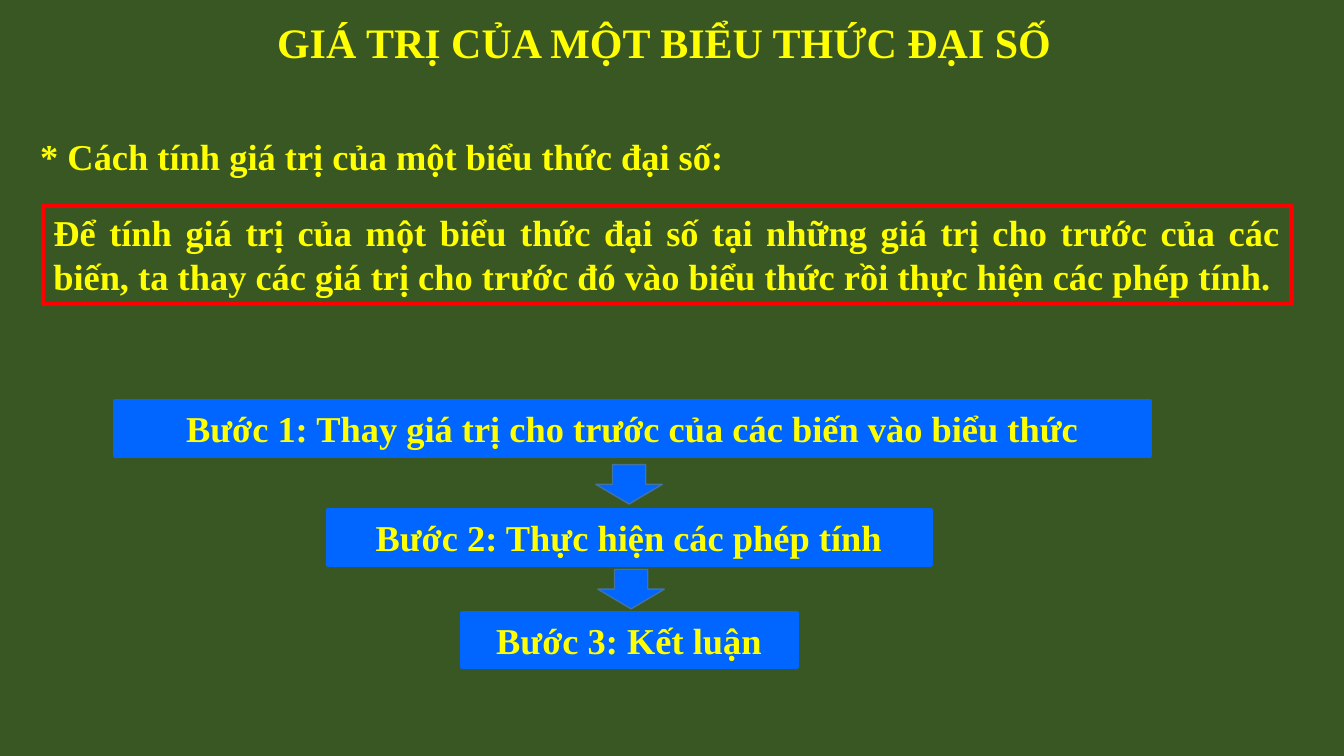
from dataclasses import dataclass

from pptx import Presentation
from pptx.dml.color import RGBColor
from pptx.enum.shapes import MSO_SHAPE as SHAPE
from pptx.enum.text import MSO_ANCHOR as ANCHOR, MSO_AUTO_SIZE as AUTO, PP_ALIGN as ALIGN
from pptx.util import Inches, Pt


@dataclass(frozen=True)
class Theme:
    font: str = "Times New Roman"
    board: RGBColor = RGBColor(0x38, 0x57, 0x23)
    text: RGBColor = RGBColor(0xFF, 0xFF, 0x00)
    frame: RGBColor = RGBColor(0xFF, 0x00, 0x00)
    step: RGBColor = RGBColor(0x00, 0x66, 0xFF)
    arrow_line: RGBColor = RGBColor(0x43, 0x73, 0x9E)
    title_size: int = 30
    body_size: int = 26


theme = Theme()
prs = Presentation()
prs.slide_width, prs.slide_height = Inches(13.33), Inches(7.5)
s = prs.slides.add_slide(prs.slide_layouts[6])
s.background.fill.solid()
s.background.fill.fore_color.rgb = theme.board


def add_box(kind, box, fill, line, width):
    sp = s.shapes.add_shape(kind, *map(Inches, box))
    sp.shadow.inherit = False
    if fill is None:
        sp.fill.background()
    else:
        sp.fill.solid()
        sp.fill.fore_color.rgb = fill
    sp.line.color.rgb = line
    sp.line.width = Pt(width)
    return sp


def write(sp, text, size, align, wrap=True):
    tf = sp.text_frame
    tf.word_wrap = wrap
    tf.auto_size = AUTO.SHAPE_TO_FIT_TEXT
    tf.vertical_anchor = ANCHOR.TOP
    p = tf.paragraphs[0]
    p.alignment = align
    r = p.add_run()
    r.text = text
    r.font.name = theme.font
    r.font.size = Pt(size)
    r.font.bold = True
    r.font.color.rgb = theme.text


# Title and subheading
headings = [
    ("GIÁ TRỊ CỦA MỘT BIỂU THỨC ĐẠI SỐ", (2.65, 0.11, 7.95, 0.61), theme.title_size),
    ("* Cách tính giá trị của một biểu thức đại số:", (0.3, 1.28, 7.05, 0.54), theme.body_size),
]
for text, box, size in headings:
    write(s.shapes.add_textbox(*map(Inches, box)), text, size, ALIGN.LEFT, wrap=False)

# Framed rule
rule = add_box(SHAPE.RECTANGLE, (0.43, 2.04, 12.38, 0.98), None, theme.frame, 3)
write(
    rule,
    "Để tính giá trị của một biểu thức đại số tại những giá trị cho trước của các biến, "
    "ta thay các giá trị cho trước đó vào biểu thức rồi thực hiện các phép tính.",
    theme.body_size,
    ALIGN.JUSTIFY,
)

# Steps: left, top, width
steps = [
    ("Bước 1: Thay giá trị cho trước của các biến vào biểu thức", 1.14, 3.98, 10.27),
    ("Bước 2: Thực hiện các phép tính", 3.25, 5.06, 5.98),
    ("Bước 3: Kết luận", 4.58, 6.08, 3.32),
]
for text, left, top, width in steps:
    sp = add_box(SHAPE.RECTANGLE, (left, top, width, 0.54), theme.step, theme.step, 3)
    write(sp, text, theme.body_size, ALIGN.CENTER)

# Arrows between the steps
for left, top in [(5.91, 4.61), (5.93, 5.65)]:
    add_box(SHAPE.DOWN_ARROW, (left, top, 0.66, 0.39), theme.step, theme.arrow_line, 1)

prs.save("out.pptx")
